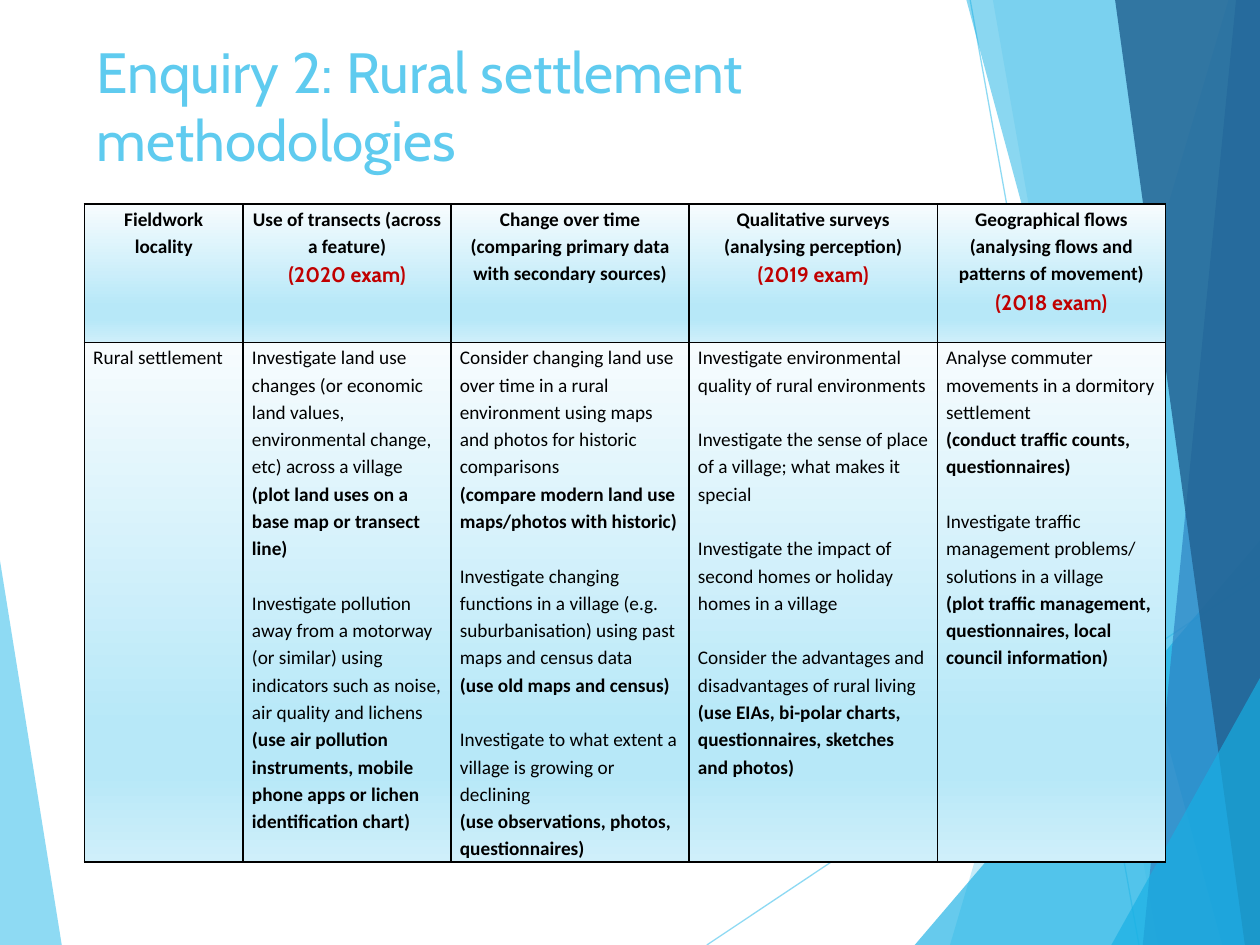
from lxml import etree
from pptx import Presentation
from pptx.dml.color import RGBColor
from pptx.enum.shapes import MSO_CONNECTOR
from pptx.enum.text import MSO_ANCHOR, PP_ALIGN
from pptx.oxml.ns import qn
from pptx.util import Inches, Pt

STRAIGHT = MSO_CONNECTOR.STRAIGHT
MIDDLE, TOP = MSO_ANCHOR.MIDDLE, MSO_ANCHOR.TOP
LEFT, CENTER = PP_ALIGN.LEFT, PP_ALIGN.CENTER

THEME = {
    "sky": "5FCBEF", "cyan": "17B0E4", "blue": "2E83C3", "navy": "226292",
    "ink": "000000", "exam": "C00000",
    "gradient": [(0, "F7FCFE"), (74, "B7E8F8"), (83, "B7E8F8"), (100, "CFEFFA")],
    "heading_font": "Cabin", "body_font": "Calibri",
    "title_size": 32.4, "exam_size": 12, "body_size": 11,
    "line_spacing": 1.15, "group_gap": 15.6, "hairline": 0.75, "border": 1,
}

# Content
TITLE = "Enquiry 2: Rural settlement methodologies"

# Each heading: text, exam note
HEADINGS = [
    ("Fieldwork locality", None),
    ("Use of transects (across a feature)", "(2020 exam)"),
    ("Change over time (comparing primary data with secondary sources)", None),
    ("Qualitative surveys (analysing perception)", "(2019 exam)"),
    ("Geographical flows (analysing flows and patterns of movement)", "(2018 exam)"),
]

# Each column: list of (enquiry, method)
ENQUIRIES = [
    [("Rural settlement", None)],
    [("Investigate land use changes (or economic land values, environmental change, "
      "etc) across a village",
      "(plot land uses on a base map or transect line)"),
     ("Investigate pollution away from a motorway (or similar) using indicators such "
      "as noise, air quality and lichens",
      "(use air pollution instruments, mobile phone apps or lichen identification chart)")],
    [("Consider changing land use over time in a rural environment using maps and "
      "photos for historic comparisons",
      "(compare modern land use maps/photos with historic)"),
     ("Investigate changing functions in a village (e.g. suburbanisation) using past "
      "maps and census data",
      "(use old maps and census)"),
     ("Investigate to what extent a village is growing or declining",
      "(use observations, photos, questionnaires)")],
    [("Investigate environmental quality of rural environments", None),
     ("Investigate the sense of place of a village; what makes it special", None),
     ("Investigate the impact of second homes or holiday homes in a village", None),
     ("Consider the advantages and disadvantages of rural living",
      "(use EIAs, bi-polar charts, questionnaires, sketches and photos)")],
    [("Analyse commuter movements in a dormitory settlement",
      "(conduct traffic counts, questionnaires)"),
     ("Investigate traffic management problems/ solutions in a village",
      "(plot traffic management, questionnaires, local council information)")],
]
COLUMN_WIDTHS = [1.26, 1.65, 1.89, 1.97, 1.81]
ROW_HEIGHTS = [1.1, 4.12]

# Backdrop: colour, opacity in percent, corners
WIDTH, HEIGHT = 10, 7.5
LEFT_SHARD = ("sky", 70, [(0, 4.45), (0.49, HEIGHT), (0, HEIGHT)])
RAYS = [((5.61, 7.5), (10, 4.57)), ((7.7, 0), (9.04, 7.5))]
RIGHT_EDGE = [(WIDTH, HEIGHT), (WIDTH, 0)]
RIGHT_SHARDS = [
    ("sky", 36, [(9.75, 0), (7.54, HEIGHT)] + RIGHT_EDGE),
    ("sky", 20, [(7.88, 0), (9.19, HEIGHT)] + RIGHT_EDGE),
    ("cyan", 66, [(7.26, HEIGHT), (WIDTH, 4.29), (WIDTH, HEIGHT)]),
    ("cyan", 50, [(7.67, 0), (9.7, HEIGHT)] + RIGHT_EDGE),
    ("blue", 70, [(9.81, 0), (9.07, HEIGHT)] + RIGHT_EDGE),
    ("navy", 82, [(8.85, 0), (9.88, HEIGHT)] + RIGHT_EDGE),
    ("cyan", 66, [(8.82, HEIGHT), (WIDTH, 5.38), (WIDTH, HEIGHT)]),
]


def set_opacity(element, percent):
    color = next(element.iter(qn("a:srgbClr")))
    etree.SubElement(color, qn("a:alpha"), val=str(percent * 1000))


def add_shard(page, color, opacity, corners):
    points = [(Inches(x), Inches(y)) for x, y in corners]
    builder = page.shapes.build_freeform(*points[0])
    builder.add_line_segments(points[1:], close=True)
    shard = builder.convert_to_shape()
    shard.shadow.inherit = False
    shard.fill.solid()
    shard.fill.fore_color.rgb = RGBColor.from_string(THEME[color])
    shard.line.fill.background()
    set_opacity(shard.fill._xPr, opacity)


def add_ray(page, start, end):
    ray = page.shapes.add_connector(STRAIGHT, *(Inches(value) for value in start + end))
    ray.line.color.rgb = RGBColor.from_string(THEME["sky"])
    ray.line.width = Pt(THEME["hairline"])
    properties = ray._element.spPr
    set_opacity(properties, 70)
    etree.SubElement(properties, qn("a:effectLst"))


def write_text(para, text, *, size=THEME["body_size"], font=THEME["body_font"],
               color="ink", bold=False, align=LEFT, spacing=THEME["line_spacing"],
               before=0):
    para.alignment = align
    para.line_spacing = spacing
    para.space_before = Pt(before)
    span = para.add_run()
    span.text = text
    span.font.size = Pt(size)
    span.font.name = font
    span.font.bold = bold
    span.font.color.rgb = RGBColor.from_string(THEME[color])


def heading_lines(text, exam):
    lines = [(text, {"bold": True, "align": CENTER})]
    if exam:
        lines.append((exam, {"bold": True, "align": CENTER, "color": "exam",
                             "font": THEME["heading_font"], "size": THEME["exam_size"]}))
    return lines


def enquiry_lines(groups):
    lines = []
    for enquiry, method in groups:
        lines.append((enquiry, {"before": THEME["group_gap"] if lines else 0}))
        if method:
            lines.append((method, {"bold": True}))
    return lines


def style_cell(cell):
    cell.margin_left = cell.margin_right = Inches(0.07)
    cell.margin_top = cell.margin_bottom = 0
    cell.vertical_anchor = TOP
    properties = cell._tc.get_or_add_tcPr()
    for side in ("lnL", "lnR", "lnT", "lnB"):
        border = etree.SubElement(properties, qn("a:" + side), w=str(Pt(THEME["border"])))
        solid = etree.SubElement(border, qn("a:solidFill"))
        etree.SubElement(solid, qn("a:srgbClr"), val=THEME["ink"])
    gradient = etree.SubElement(properties, qn("a:gradFill"), rotWithShape="1")
    stops = etree.SubElement(gradient, qn("a:gsLst"))
    for position, color in THEME["gradient"]:
        stop = etree.SubElement(stops, qn("a:gs"), pos=str(position * 1000))
        etree.SubElement(stop, qn("a:srgbClr"), val=color)
    etree.SubElement(gradient, qn("a:lin"), ang="5400000", scaled="0")


def fill_cell(cell, lines):
    style_cell(cell)
    frame = cell.text_frame
    for index, (text, style) in enumerate(lines):
        para = frame.add_paragraph() if index else frame.paragraphs[0]
        write_text(para, text, **style)


def add_title(page):
    box = page.shapes.add_textbox(Inches(0.67), Inches(0.21), Inches(6.93), Inches(1.25))
    frame = box.text_frame
    frame.word_wrap = True
    frame.vertical_anchor = MIDDLE
    write_text(frame.paragraphs[0], TITLE, size=THEME["title_size"],
               font=THEME["heading_font"], color="sky", spacing=1)


def add_methods_table(page):
    rows = [[heading_lines(*heading) for heading in HEADINGS],
            [enquiry_lines(groups) for groups in ENQUIRIES]]
    table = page.shapes.add_table(
        len(rows), len(HEADINGS), Inches(0.67), Inches(1.62),
        Inches(sum(COLUMN_WIDTHS)), Inches(sum(ROW_HEIGHTS))).table
    table.horz_banding = False
    for column, width in zip(table.columns, COLUMN_WIDTHS):
        column.width = Inches(width)
    for row, height, contents in zip(table.rows, ROW_HEIGHTS, rows):
        row.height = Inches(height)
        for cell, lines in zip(row.cells, contents):
            fill_cell(cell, lines)


def main():
    deck = Presentation()
    deck.slide_width, deck.slide_height = Inches(WIDTH), Inches(HEIGHT)
    page = deck.slides.add_slide(deck.slide_layouts[6])

    # Backdrop, from back to front
    add_shard(page, *LEFT_SHARD)
    for start, end in RAYS:
        add_ray(page, start, end)
    for shard in RIGHT_SHARDS:
        add_shard(page, *shard)

    # Title and table
    add_title(page)
    add_methods_table(page)
    deck.save("out.pptx")


if __name__ == "__main__":
    main()
